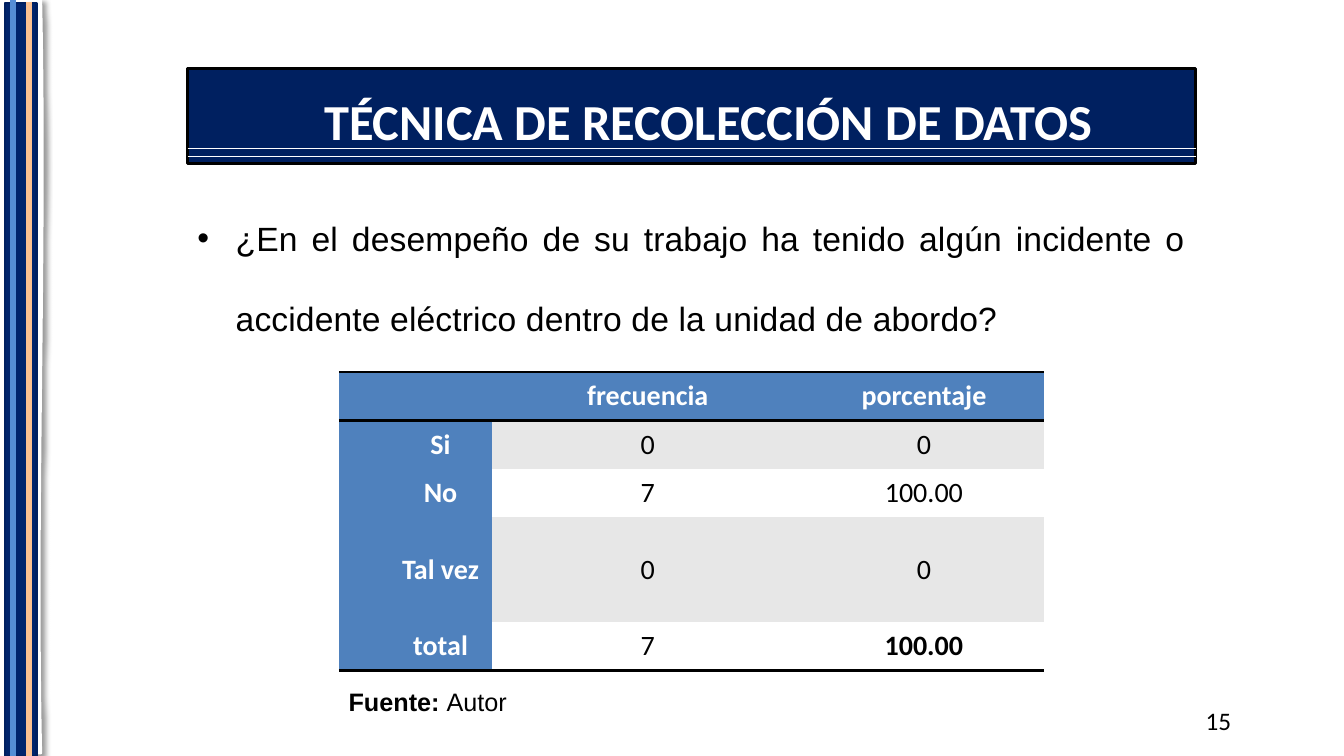
"""Build the data collection slide with its frequency table."""
from dataclasses import dataclass
from typing import Any

from lxml.etree import SubElement
from pptx import Presentation
from pptx.dml.color import RGBColor
from pptx.enum.shapes import MSO_CONNECTOR, MSO_SHAPE
from pptx.enum.text import MSO_ANCHOR, MSO_AUTO_SIZE, PP_ALIGN
from pptx.oxml import parse_xml
from pptx.oxml.ns import nsdecls, qn
from pptx.util import Inches, Pt


@dataclass(frozen=True)
class Theme:
    """Colours, fonts and type sizes."""
    white: str = "FFFFFF"
    black: str = "000000"
    navy: str = "002060"
    deep: str = "00246C"
    sky: str = "558ED5"
    peach: str = "FAC090"
    blue: str = "4F81BD"
    grey: str = "E7E7E7"
    sans: str = "Calibri"
    plain: str = "Arial"
    title: int = 36
    body: int = 24
    cell: int = 20
    small: int = 18


@dataclass(frozen=True)
class Panel:
    """A filled shape with an outline."""
    kind: MSO_SHAPE
    box: tuple[float, ...]
    fill: str
    line: str
    turn: int = 0


@dataclass(frozen=True)
class Rule:
    """A straight line."""
    ends: tuple[float, ...]
    tint: str
    width: float


@dataclass(frozen=True)
class Label:
    """A text box with one paragraph of (text, bold) runs."""
    box: tuple[float, ...]
    runs: tuple[tuple[str, bool], ...]
    size: int
    face: str
    tint: str
    align: PP_ALIGN = PP_ALIGN.LEFT
    grow: bool = True


LOOK = Theme()
LEFT, RIGHT = 1.86, 11.86
PANELS = (
    Panel(MSO_SHAPE.WAVE, (-3.38, 3.67, 7.47, 0.13), LOOK.white, LOOK.white, 90),
    Panel(MSO_SHAPE.RECTANGLE, (0.05, 0.03, 0.31, 7.47), LOOK.deep, LOOK.navy),
    Panel(MSO_SHAPE.RECTANGLE, (LEFT, 0.68, 10, 0.94), LOOK.navy, LOOK.black),
)
RULES = (
    Rule((LEFT, 1.55, RIGHT, 1.55), LOOK.white, 0.75),
    Rule((LEFT, 1.47, RIGHT, 1.47), LOOK.white, 0.75),
    Rule((0.13, 0, 0.13, 7.5), LOOK.sky, 4.5),
    Rule((0.29, 0.02, 0.29, 7.52), LOOK.peach, 4.5),
)
TITLE = Label((2.97, 0.84, 8.11, 0.71), (("TÉCNICA DE RECOLECCIÓN DE DATOS", True),),
              LOOK.title, LOOK.sans, LOOK.white, PP_ALIGN.CENTER)
PAGE = Label((RIGHT, 6.95, 0.8, 0.4), (("15", False),),
             LOOK.small, LOOK.sans, LOOK.black, grow=False)
QUERY = Label((LEFT, 1.71, 10, 1.59),
              (("¿En el desempeño de su trabajo ha tenido algún incidente o accidente "
                "eléctrico dentro de la unidad de abordo?", False),),
              LOOK.body, LOOK.plain, LOOK.black, PP_ALIGN.JUSTIFY)
CREDIT = Label((3.36, 6.76, 2.13, 0.4), (("Fuente: ", True), ("Autor", False)),
               LOOK.small, LOOK.plain, LOOK.black)
ROWS = (
    ("", "frecuencia", "porcentaje"),
    ("Si", "0", "0"),
    ("No", "7", "100.00"),
    ("Tal vez", "0", "0"),
    ("total", "7", "100.00"),
)
WIDTHS = (1.52, 2.59, 2.89)
HEIGHTS = (0.48, 0.48, 0.48, 1.04, 0.48)
PLACE = (3.36, 3.69, sum(WIDTHS), sum(HEIGHTS))
NO_GRID = "{2D5ABB26-0587-4C30-8999-92F81FD0307C}"


def apply(item: Any, form: dict[str, Any]) -> None:
    """Set each named value on the item."""
    for name, value in form.items():
        setattr(item, name, value)


def paint(fill: Any, tint: str) -> None:
    """Make a fill solid in the given colour."""
    fill.solid()
    fill.fore_color.rgb = RGBColor.from_string(tint)


def add_run(para: Any, text: str, bold: bool, size: int, face: str, tint: str) -> Any:
    """Add a styled run of text."""
    run = para.add_run()
    run.text = text
    apply(run.font, {"size": Pt(size), "name": face, "bold": bold})
    run.font.color.rgb = RGBColor.from_string(tint)
    return run


def add_panel(slide: Any, panel: Panel) -> Any:
    """Draw a filled shape."""
    shape = slide.shapes.add_shape(panel.kind, *map(Inches, panel.box))
    shape.rotation = panel.turn
    shape.shadow.inherit = False
    paint(shape.fill, panel.fill)
    paint(shape.line.fill, panel.line)
    shape.line.width = Pt(2)
    return shape


def cast_shade(shape: Any) -> None:
    """Give a shape a soft outer shadow."""
    effect = shape.element.spPr.find(qn("a:effectLst"))
    effect.append(parse_xml(
        f'<a:outerShdw {nsdecls("a")} blurRad="{Pt(4)}" dist="{Pt(3)}" dir="2700000" '
        f'algn="tl" rotWithShape="0"><a:srgbClr val="{LOOK.black}">'
        '<a:alpha val="40000"/></a:srgbClr></a:outerShdw>'))


def add_rule(slide: Any, rule: Rule) -> None:
    """Draw a straight line without shadow."""
    line = slide.shapes.add_connector(MSO_CONNECTOR.STRAIGHT, *map(Inches, rule.ends))
    paint(line.line.fill, rule.tint)
    line.line.width = Pt(rule.width)
    SubElement(line.element.spPr, qn("a:effectLst"))


def add_label(slide: Any, label: Label) -> Any:
    """Write a text box and return its paragraph."""
    frame = slide.shapes.add_textbox(*map(Inches, label.box)).text_frame
    fit = MSO_AUTO_SIZE.SHAPE_TO_FIT_TEXT if label.grow else MSO_AUTO_SIZE.NONE
    apply(frame, {"word_wrap": True, "auto_size": fit})
    para = frame.paragraphs[0]
    para.alignment = label.align
    for text, bold in label.runs:
        add_run(para, text, bold, label.size, label.face, label.tint)
    return para


def indent(para: Any, left: float, first: float) -> Any:
    """Set the paragraph indents and return its properties."""
    props = para._p.get_or_add_pPr()
    props.set("marL", str(Inches(left)))
    props.set("indent", str(Inches(first)))
    return props


def add_query(slide: Any) -> None:
    """Write the bulleted question."""
    para = add_label(slide, QUERY)
    para.line_spacing = 2.0
    props = indent(para, 0.38, -0.38)
    SubElement(props, qn("a:buFont"), typeface=LOOK.plain)
    SubElement(props, qn("a:buChar"), char="•")
    para.runs[0].font._element.set("spc", "10")


def fill_cell(cell: Any, text: str, row: int, col: int) -> None:
    """Style one cell by its place and write its text."""
    head = row == 0 or col == 0
    last = len(ROWS) - 1
    apply(cell, {"margin_left": Inches(0.07), "margin_right": Inches(0.07),
                 "margin_top": 0, "margin_bottom": 0,
                 "vertical_anchor": MSO_ANCHOR.MIDDLE})
    paint(cell.fill, LOOK.blue if head else LOOK.grey if row % 2 else LOOK.white)
    sides = {0: ("lnT", "lnB"), last: ("lnB",)}.get(row, ())
    for spot, side in enumerate(sides):
        cell._tc.get_or_add_tcPr().insert(spot, parse_xml(
            f'<a:{side} {nsdecls("a")} w="{Pt(2)}"><a:solidFill>'
            f'<a:srgbClr val="{LOOK.black}"/></a:solidFill></a:{side}>'))
    if text:
        para = cell.text_frame.paragraphs[0]
        para.alignment = PP_ALIGN.CENTER
        indent(para, 0, 0.5)
        bold = head or (row, col) == (last, len(WIDTHS) - 1)
        add_run(para, text, bold, LOOK.cell, LOOK.sans, LOOK.white if head else LOOK.black)


def add_grid(slide: Any) -> None:
    """Build the frequency table."""
    table = slide.shapes.add_table(len(ROWS), len(WIDTHS), *map(Inches, PLACE)).table
    apply(table, {"first_row": False, "horz_banding": False})
    table._tbl.tblPr.find(qn("a:tableStyleId")).text = NO_GRID
    for col, width in zip(table.columns, WIDTHS):
        col.width = Inches(width)
    for row, height in zip(table.rows, HEIGHTS):
        row.height = Inches(height)
    for row, texts in enumerate(ROWS):
        for col, text in enumerate(texts):
            fill_cell(table.cell(row, col), text, row, col)


def main() -> None:
    """Build and save the slide."""
    deck = Presentation()
    apply(deck, {"slide_width": Inches(13.33), "slide_height": Inches(7.5)})
    slide = deck.slides.add_slide(deck.slide_layouts[6])
    shapes = [add_panel(slide, panel) for panel in PANELS]
    cast_shade(shapes[0])
    add_label(slide, TITLE)
    for rule in RULES:
        add_rule(slide, rule)
    add_label(slide, PAGE)
    add_query(slide)
    add_grid(slide)
    add_label(slide, CREDIT)
    deck.save("out.pptx")


if __name__ == "__main__":
    main()
